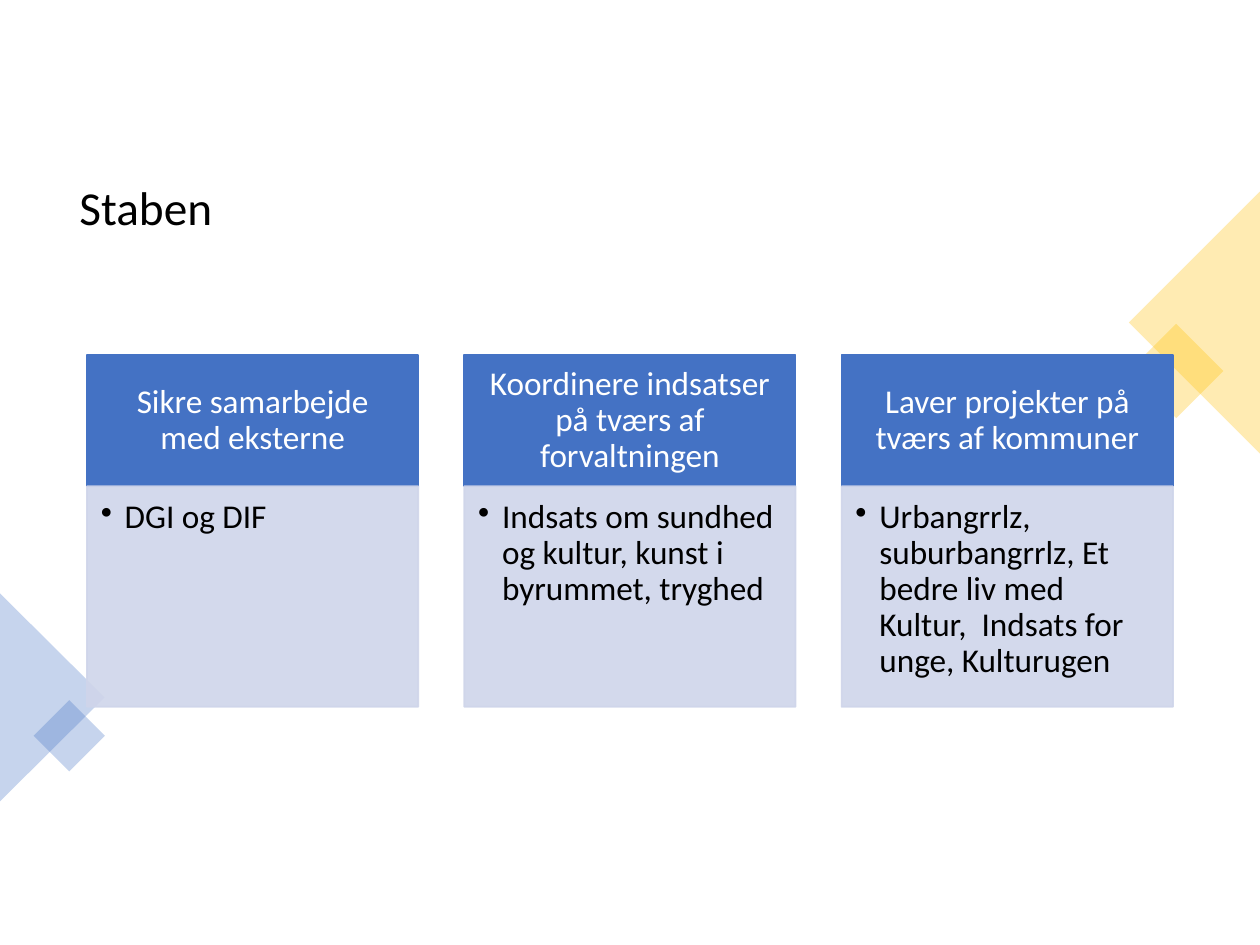
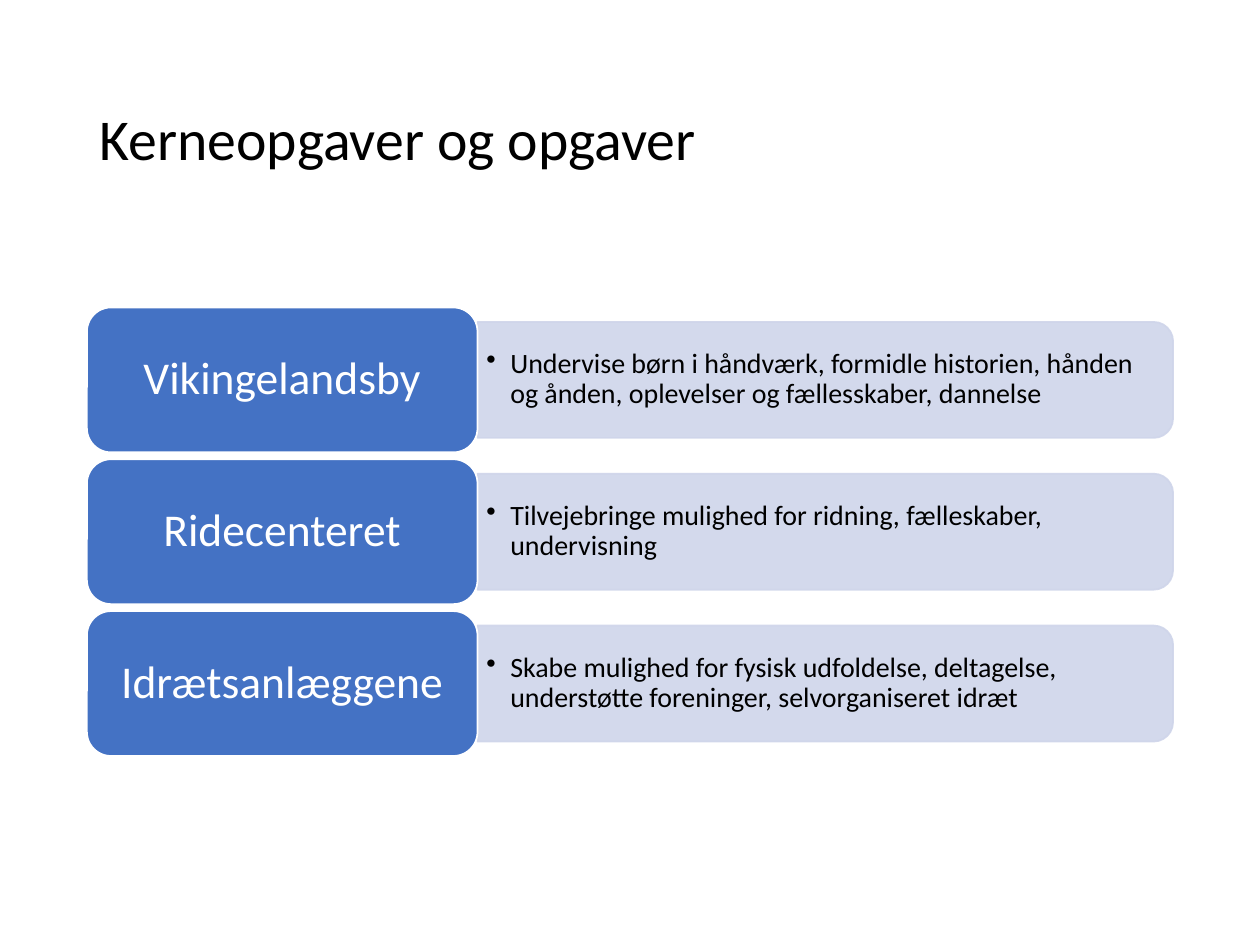
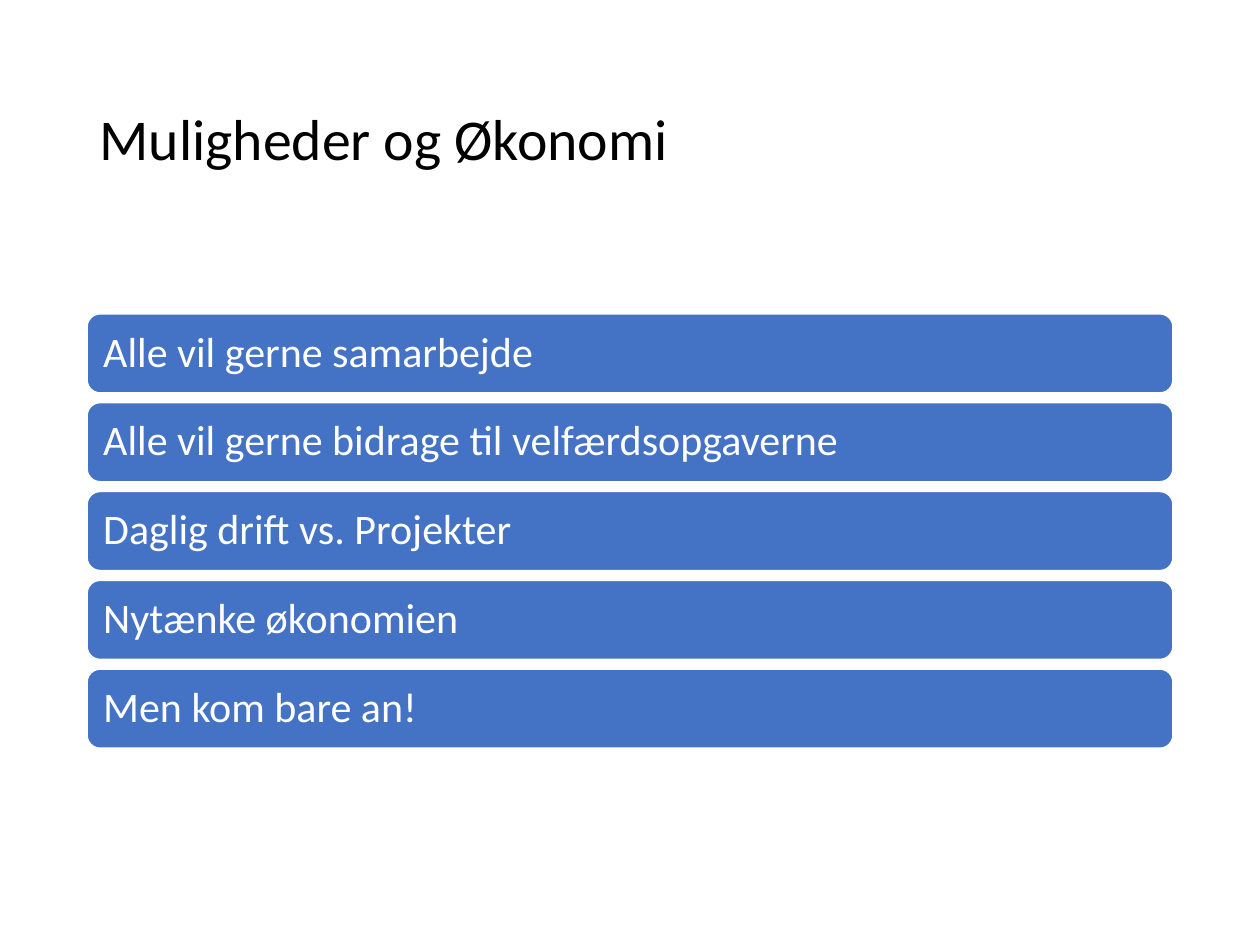
from lxml import etree
from pptx import Presentation
from pptx.dml.color import RGBColor
from pptx.enum.shapes import MSO_SHAPE
from pptx.enum.text import MSO_ANCHOR, MSO_AUTO_SIZE, PP_ALIGN
from pptx.oxml.ns import qn
from pptx.util import Inches, Pt

RECT, ROUND = MSO_SHAPE.RECTANGLE, MSO_SHAPE.ROUNDED_RECTANGLE
TRIANGLE, ROUND_TOP = MSO_SHAPE.ISOSCELES_TRIANGLE, MSO_SHAPE.ROUND_2_SAME_RECTANGLE
TOP, MIDDLE = MSO_ANCHOR.TOP, MSO_ANCHOR.MIDDLE
LEFT, CENTER = PP_ALIGN.LEFT, PP_ALIGN.CENTER
NO_FIT = MSO_AUTO_SIZE.NONE

COLORS = {"blue": "4472C4", "pale": "CFD5EA", "gold": "FFC000",
          "white": "FFFFFF", "black": "000000"}
FONT = "Calibri"
BULLET_INDENT = 0.19
TITLE_BOX = (0.69, 0.4, 8.62, 1.45)

STAFF_TASKS = [
    ("Sikre samarbejde med eksterne", "DGI og DIF"),
    ("Koordinere indsatser på tværs af forvaltningen",
     "Indsats om sundhed og kultur, kunst i byrummet, tryghed"),
    ("Laver projekter på tværs af kommuner",
     "Urbangrrlz, suburbangrrlz, Et bedre liv med Kultur,  Indsats for unge, Kulturugen"),
]
CORE_TASKS = [
    ("Vikingelandsby", "Undervise børn i håndværk, formidle historien, hånden og ånden, "
                       "oplevelser og fællesskaber, dannelse"),
    ("Ridecenteret", "Tilvejebringe mulighed for ridning, fælleskaber, undervisning"),
    ("Idrætsanlæggene", "Skabe mulighed for fysisk udfoldelse, deltagelse, "
                        "understøtte foreninger, selvorganiseret idræt"),
]
OPPORTUNITIES = ["Alle vil gerne samarbejde", "Alle vil gerne bidrage til velfærdsopgaverne",
                 "Daglig drift vs. Projekter", "Nytænke økonomien", "Men kom bare an!"]


def rgb(name):
    return RGBColor.from_string(COLORS[name])


def spread(start, total, size, count):
    """Start positions of equal parts that fill a length with equal gaps."""
    step = (total - size) / (count - 1)
    return [start + i * step for i in range(count)]


def add_box(s, kind, box, fill, line=None, opacity=100, rotation=0):
    sp = s.shapes.add_shape(kind, *map(Inches, box))
    sp.shadow.inherit = False
    sp.rotation = rotation
    sp.fill.solid()
    sp.fill.fore_color.rgb = rgb(fill)
    if line:
        sp.line.color.rgb = rgb(line)
        sp.line.width = Pt(1)
    else:
        sp.line.fill.background()
    if opacity < 100:
        for color in sp._element.spPr.iter(qn("a:srgbClr")):
            etree.SubElement(color, qn("a:alpha"), val=str(opacity * 1000))
    return sp


def write(sp, text, size, color, align=LEFT, anchor=MIDDLE,
          insets=(0.1, 0.05, 0.1, 0.05), bullet=False):
    tf = sp.text_frame
    margins = dict(zip(("margin_left", "margin_top", "margin_right", "margin_bottom"),
                       map(Inches, insets)))
    frame = {"word_wrap": True, "auto_size": NO_FIT, "vertical_anchor": anchor, **margins}
    for name, value in frame.items():
        setattr(tf, name, value)
    p = tf.paragraphs[0]
    if bullet:
        pPr = p._p.get_or_add_pPr()
        pPr.set("marL", str(Inches(BULLET_INDENT)))
        pPr.set("indent", str(-Inches(BULLET_INDENT)))
        etree.SubElement(pPr, qn("a:buChar"), char="•")
    p.alignment = align
    p.line_spacing = 0.9
    r = p.add_run()
    r.text = text
    for name, value in {"name": FONT, "size": Pt(size), "bold": False}.items():
        setattr(r.font, name, value)
    r.font.color.rgb = rgb(color)


def add_slide(prs, title, box=TITLE_BOX, size=33):
    s = prs.slides.add_slide(prs.slide_layouts[5])
    sp = s.shapes.title
    sp.left, sp.top, sp.width, sp.height = map(Inches, box)
    write(sp, title, size, "black")
    return s


def add_corner_diamonds(s):
    # Half diamonds cut by the slide edges, each with a small diamond
    for kind, box, color, rotation in [
        (RECT, (9.07, 2.68, 0.53, 0.53), "gold", 45),
        (TRIANGLE, (8.44, 2.04, 2.08, 1.04), "gold", 270),
        (TRIANGLE, (-0.41, 5.12, 1.65, 0.83), "blue", 90),
        (RECT, (0.35, 5.64, 0.4, 0.4), "blue", 45),
    ]:
        add_box(s, kind, box, color, opacity=30, rotation=rotation)


def add_columns(s, box, items, col_w=2.63, head_h=1.04):
    left, top, width, height = box
    for x, (heading, detail) in zip(spread(left, width, col_w, len(items)), items):
        head = add_box(s, RECT, (x, top, col_w, head_h), "blue", "blue")
        write(head, heading, 19, "white", CENTER, insets=(0.15, 0.08, 0.15, 0.08))
        body = add_box(s, RECT, (x, top + head_h, col_w, height - head_h),
                       "pale", "pale", opacity=90)
        write(body, detail, 19, "black", anchor=TOP,
              insets=(0.11, 0.11, 0.15, 0.17), bullet=True)


def add_label_rows(s, box, items, row_h=1.15, label_w=3.1, band_h=0.92):
    left, top, width, height = box
    band_x, band_w = left + label_w, width - label_w
    for y, (label, detail) in zip(spread(top, height, row_h, len(items)), items):
        middle = y + row_h / 2
        # The band is an upright shape turned a quarter about its centre
        add_box(s, ROUND_TOP, (band_x + (band_w - band_h) / 2, middle - band_w / 2,
                               band_h, band_w), "pale", "pale", opacity=90, rotation=90)
        text_h = band_h - 0.09
        tb = s.shapes.add_textbox(*map(Inches, (band_x, middle - text_h / 2,
                                                band_w - 0.04, text_h)))
        write(tb, detail, 16, "black", insets=(0.07, 0.03, 0.07, 0.03), bullet=True)
        sp = add_box(s, ROUND, (left, y, label_w, row_h), "blue", "white")
        write(sp, label, 26, "white", CENTER, insets=(0.11, 0.05, 0.11, 0.05))


def add_bars(s, box, items, bar_h=0.63):
    left, top, width, height = box
    for y, text in zip(spread(top, height, bar_h, len(items)), items):
        bar = add_box(s, ROUND, (left, y, width, bar_h), "blue", "white")
        write(bar, text, 24, "white", insets=(0.1, 0.1, 0.1, 0.1))


def main():
    prs = Presentation()
    prs.slide_width, prs.slide_height = Inches(10), Inches(7.5)

    s = add_slide(prs, "Staben", (0.53, 1.2, 8.94, 0.93), 27)
    add_corner_diamonds(s)
    add_columns(s, (0.69, 2.82, 8.62, 2.79), STAFF_TASKS)

    s = add_slide(prs, "Kerneopgaver og opgaver")
    add_label_rows(s, (0.69, 2.44, 8.62, 3.56), CORE_TASKS)

    s = add_slide(prs, "Muligheder og Økonomi")
    add_bars(s, (0.69, 2.49, 8.62, 3.45), OPPORTUNITIES)

    prs.save("out.pptx")


if __name__ == "__main__":
    main()
